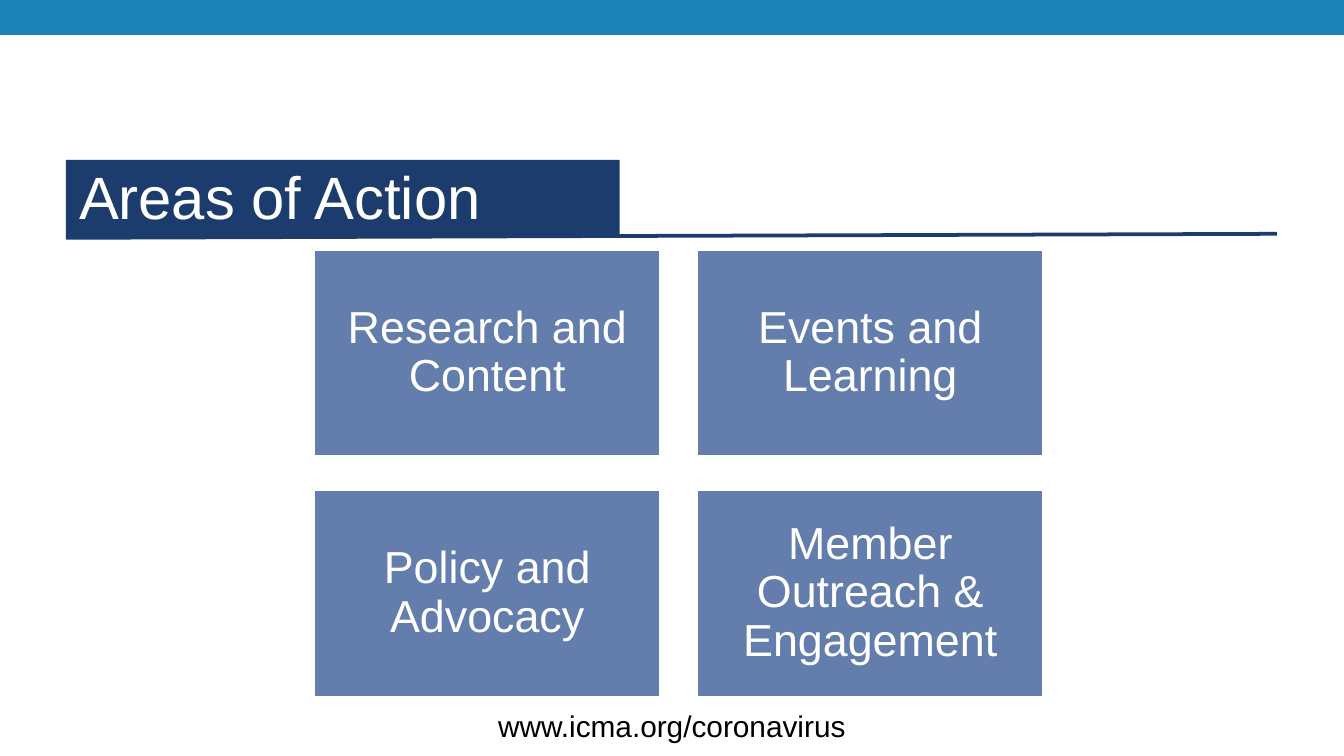
import pptx
import pptx.util
import pptx.dml.color
import pptx.enum.shapes
import pptx.enum.text
import pptx.oxml.ns
from lxml import etree

Inches, Pt = pptx.util.Inches, pptx.util.Pt
RGB = pptx.dml.color.RGBColor.from_string
ALIGN = pptx.enum.text.PP_ALIGN
ANCHOR = pptx.enum.text.MSO_ANCHOR

TITLE = "Areas of Action"
AREAS = [
    ["Research and Content", "Events and Learning"],
    ["Policy and Advocacy", "Member Outreach & Engagement"],
]
ADDRESS = "www.icma.org/coronavirus"

THEME = {
    "font": "Arial",
    "banner": "1C82B8", "navy": "1C3C6D", "card": "637DAC",
    "light": "FFFFFF", "dark": "000000",
    "title_size": 32, "card_size": 24, "address_size": 16,
    "line_width": 2,
}

WIDTH = 10
HEIGHT = WIDTH * 9 / 16
LEFT = 0.49
GRID_LEFT, GRID_TOP = 2.33, 1.85
CARD_WIDTH, CARD_HEIGHT = 2.59, 1.55
COLUMN_GAP, ROW_GAP = 0.26, 0.24


def add_block(slide, box, fill, outline=None):
    block = slide.shapes.add_shape(
        pptx.enum.shapes.MSO_SHAPE.RECTANGLE, *map(Inches, box))
    block.shadow.inherit = False
    block.fill.solid()
    block.fill.fore_color.rgb = RGB(THEME[fill])
    if outline:
        block.line.color.rgb = RGB(THEME[outline])
        block.line.width = Pt(THEME["line_width"])
    else:
        block.line.fill.background()
    return block


def write(shape, text, size, color, align, anchor, insets):
    """Fill a shape with one paragraph; insets are left, top, right, bottom."""
    frame = shape.text_frame
    frame.word_wrap = True
    frame.vertical_anchor = anchor
    (frame.margin_left, frame.margin_top,
     frame.margin_right, frame.margin_bottom) = map(Inches, insets)
    paragraph = frame.paragraphs[0]
    paragraph.alignment = align
    run = paragraph.add_run()
    run.text = text
    run.font.name = THEME["font"]
    run.font.size = Pt(THEME[size])
    run.font.color.rgb = RGB(THEME[color])
    return paragraph


def add_rule(slide, start, end):
    rule = slide.shapes.add_connector(
        pptx.enum.shapes.MSO_CONNECTOR.STRAIGHT, *map(Inches, start + end))
    rule.line.color.rgb = RGB(THEME["navy"])
    rule.line.width = Pt(THEME["line_width"])
    etree.SubElement(rule._element.spPr, pptx.oxml.ns.qn("a:effectLst"))


def main():
    deck = pptx.Presentation()
    deck.slide_width, deck.slide_height = Inches(WIDTH), Inches(HEIGHT)
    slide = deck.slides.add_slide(deck.slide_layouts[6])

    add_rule(slide, (LEFT, 1.77), (9.5, 1.74))
    add_block(slide, (0, 0, WIDTH, 0.26), "banner")
    heading = add_block(slide, (LEFT, 1.19, 4.12, 0.58), "navy")
    write(heading, TITLE, "title_size", "light",
          ALIGN.LEFT, ANCHOR.MIDDLE, (0.1, 0, 0.1, 0.05))

    for row, areas in enumerate(AREAS):
        for column, area in enumerate(areas):
            box = (GRID_LEFT + column * (CARD_WIDTH + COLUMN_GAP),
                   GRID_TOP + row * (CARD_HEIGHT + ROW_GAP),
                   CARD_WIDTH, CARD_HEIGHT)
            card = add_block(slide, box, "card", "light")
            label = write(card, area, "card_size", "light",
                          ALIGN.CENTER, ANCHOR.MIDDLE, (0.1,) * 4)
            label.line_spacing = 0.9

    footer = slide.shapes.add_textbox(*map(Inches, (1, 5.22, 8, 0.4)))
    write(footer, ADDRESS, "address_size", "dark",
          ALIGN.CENTER, ANCHOR.TOP, (0.1, 0.05, 0.1, 0.05))

    deck.save("out.pptx")


if __name__ == "__main__":
    main()
